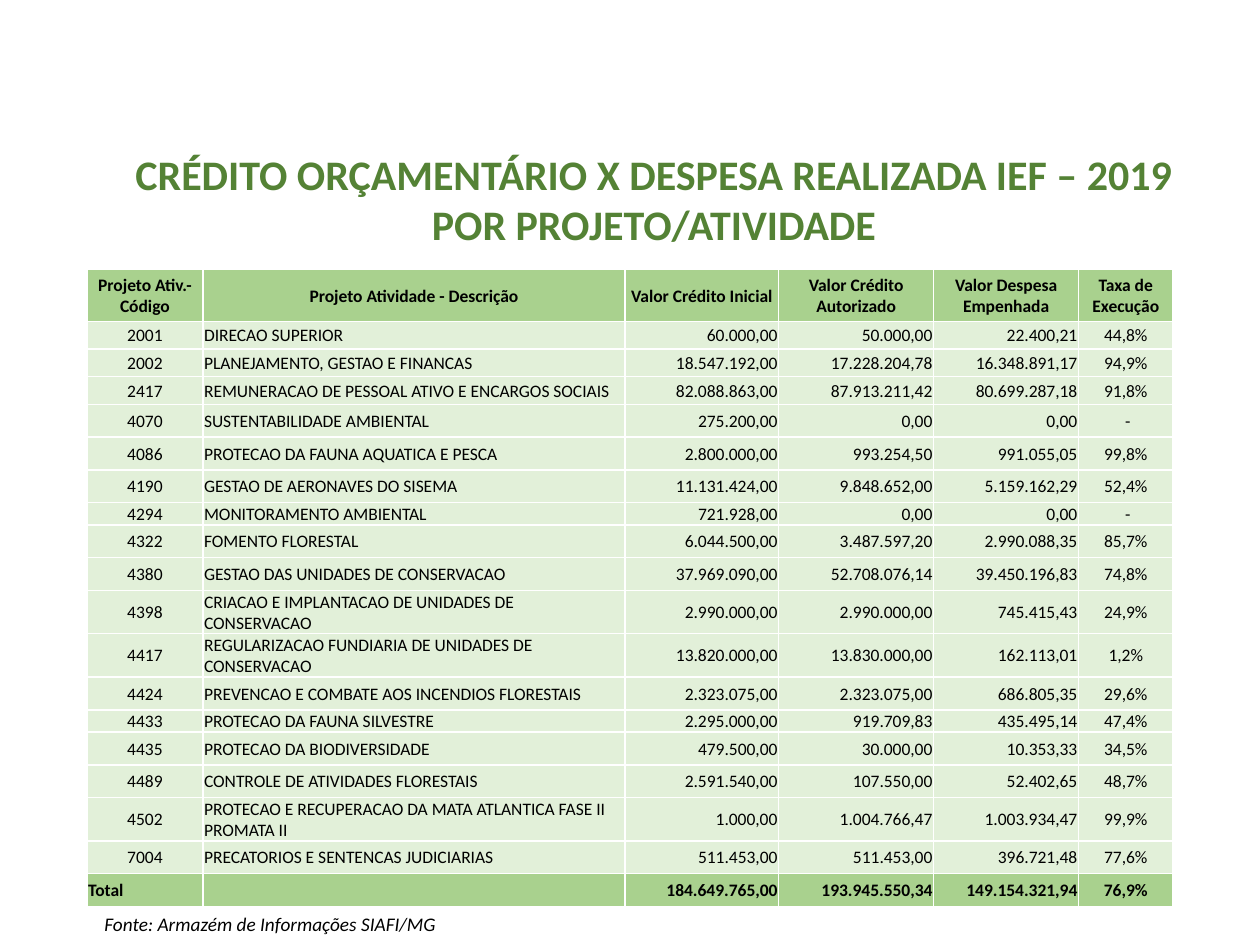
from dataclasses import dataclass

from lxml import etree
from pptx import Presentation, util as u
from pptx.dml import color
from pptx.enum import text
from pptx.oxml import ns


@dataclass(frozen=True)
class Theme:
    font: str = "Calibri"
    title: str = "548235"
    ink: str = "000000"
    band: str = "A9D18E"
    body: str = "E2F0D9"
    grid: str = "FFFFFF"
    title_size: int = 24
    table_size: int = 10
    source_size: int = 11
    grid_width: int = 1


LEFT, CENTER, RIGHT = text.PP_ALIGN.LEFT, text.PP_ALIGN.CENTER, text.PP_ALIGN.RIGHT
TOP, MIDDLE = text.MSO_ANCHOR.TOP, text.MSO_ANCHOR.MIDDLE

TITLE = ["CRÉDITO ORÇAMENTÁRIO X DESPESA REALIZADA IEF – 2019", "POR PROJETO/ATIVIDADE"]
SOURCE = ["Fonte: Armazém de Informações SIAFI/MG"]
COLUMN_WIDTHS = [0.92, 3.35, 1.22, 1.23, 1.15, 0.75]
COLUMN_ALIGNS = [CENTER, LEFT, RIGHT, RIGHT, RIGHT, CENTER]
HEADER = ["Projeto Ativ.- Código", "Projeto Atividade - Descrição", "Valor Crédito Inicial",
          "Valor Crédito Autorizado", "Valor Despesa Empenhada", "Taxa de Execução"]
PROJECTS = [
    (0.22, "2001", "DIRECAO SUPERIOR", "60.000,00", "50.000,00", "22.400,21", "44,8%"),
    (0.22, "2002", "PLANEJAMENTO, GESTAO E FINANCAS", "18.547.192,00", "17.228.204,78", "16.348.891,17", "94,9%"),
    (0.22, "2417", "REMUNERACAO DE PESSOAL ATIVO E ENCARGOS SOCIAIS", "82.088.863,00", "87.913.211,42", "80.699.287,18", "91,8%"),
    (0.26, "4070", "SUSTENTABILIDADE AMBIENTAL", "275.200,00", "0,00", "0,00", " -"),
    (0.26, "4086", "PROTECAO DA FAUNA AQUATICA E PESCA", "2.800.000,00", "993.254,50", "991.055,05", "99,8%"),
    (0.26, "4190", "GESTAO DE AERONAVES DO SISEMA", "11.131.424,00", "9.848.652,00", "5.159.162,29", "52,4%"),
    (0.17, "4294", "MONITORAMENTO AMBIENTAL", "721.928,00", "0,00", "0,00", " -"),
    (0.26, "4322", "FOMENTO FLORESTAL", "6.044.500,00", "3.487.597,20", "2.990.088,35", "85,7%"),
    (0.26, "4380", "GESTAO DAS UNIDADES DE CONSERVACAO", "37.969.090,00", "52.708.076,14", "39.450.196,83", "74,8%"),
    (0.33, "4398", "CRIACAO E IMPLANTACAO DE UNIDADES DE CONSERVACAO", "2.990.000,00", "2.990.000,00", "745.415,43", "24,9%"),
    (0.33, "4417", "REGULARIZACAO FUNDIARIA DE UNIDADES DE CONSERVACAO", "13.820.000,00", "13.830.000,00", "162.113,01", "1,2%"),
    (0.26, "4424", "PREVENCAO E COMBATE AOS INCENDIOS FLORESTAIS", "2.323.075,00", "2.323.075,00", "686.805,35", "29,6%"),
    (0.17, "4433", "PROTECAO DA FAUNA SILVESTRE", "2.295.000,00", "919.709,83", "435.495,14", "47,4%"),
    (0.26, "4435", "PROTECAO DA BIODIVERSIDADE", "479.500,00", "30.000,00", "10.353,33", "34,5%"),
    (0.26, "4489", "CONTROLE DE ATIVIDADES FLORESTAIS", "2.591.540,00", "107.550,00", "52.402,65", "48,7%"),
    (0.33, "4502", "PROTECAO E RECUPERACAO DA MATA ATLANTICA FASE II PROMATA II", "1.000,00", "1.004.766,47", "1.003.934,47", "99,9%"),
    (0.26, "7004", "PRECATORIOS E SENTENCAS JUDICIARIAS", "511.453,00", "511.453,00", "396.721,48", "77,6%"),
]
TOTAL = ["Total", "", "184.649.765,00", "193.945.550,34", "149.154.321,94", "76,9%"]


class SlideBuilder:
    def __init__(self, s, theme):
        self.s = s
        self.theme = theme

    def run(self, p, words, size, ink, bold=False, italic=False):
        r = p.add_run()
        r.text = words
        r.font.name = self.theme.font
        r.font.size = u.Pt(size)
        r.font.bold = bold
        r.font.italic = italic
        r.font.color.rgb = color.RGBColor.from_string(ink)

    def text_box(self, box, lines, size, ink, align=LEFT, anchor=TOP, **style):
        sp = self.s.shapes.add_textbox(*map(u.Inches, box))
        tf = sp.text_frame
        tf.word_wrap = True
        tf.vertical_anchor = anchor
        for i, line in enumerate(lines):
            p = tf.add_paragraph() if i else tf.paragraphs[0]
            p.alignment = align
            self.run(p, line, size, ink, **style)

    def borders(self, cell):
        tc_pr = cell._tc.get_or_add_tcPr()
        for i, side in enumerate(("a:lnL", "a:lnR", "a:lnT", "a:lnB")):
            ln = etree.Element(ns.qn(side), w=str(u.Pt(self.theme.grid_width)))
            fill = etree.SubElement(ln, ns.qn("a:solidFill"))
            etree.SubElement(fill, ns.qn("a:srgbClr"), val=self.theme.grid)
            tc_pr.insert(i, ln)

    def cell(self, cell, words, align, fill, bold):
        cell.margin_left = cell.margin_right = cell.margin_top = u.Inches(0.01)
        cell.margin_bottom = 0
        cell.vertical_anchor = MIDDLE
        cell.fill.solid()
        cell.fill.fore_color.rgb = color.RGBColor.from_string(fill)
        self.borders(cell)
        p = cell.text_frame.paragraphs[0]
        p.alignment = align
        if words:
            self.run(p, words, self.theme.table_size, self.theme.ink, bold)
        else:
            etree.SubElement(p._p, ns.qn("a:endParaRPr"), sz=str(self.theme.table_size * 100))

    def table(self, left, top, widths, rows):
        height = sum(row[0] for row in rows)
        frame = self.s.shapes.add_table(len(rows), len(widths), u.Inches(left), u.Inches(top),
                                        u.Inches(sum(widths)), u.Inches(height))
        table = frame.table
        for column, width in zip(table.columns, widths):
            column.width = u.Inches(width)
        for i, (row_height, words, aligns, fill, bold) in enumerate(rows):
            table.rows[i].height = u.Inches(row_height)
            for j, (word, align) in enumerate(zip(words, aligns)):
                self.cell(table.cell(i, j), word, align, fill, bold)


def main():
    prs = Presentation()
    prs.slide_width, prs.slide_height = u.Inches(10), u.Inches(7.5)
    theme = Theme()
    slide = SlideBuilder(prs.slides.add_slide(prs.slide_layouts[6]), theme)

    slide.text_box((0.69, 1.13, 9, 0.87), TITLE, theme.title_size, theme.title, CENTER, bold=True)
    rows = [(0.41, HEADER, [CENTER] * len(HEADER), theme.band, True)]
    rows += [(height, words, COLUMN_ALIGNS, theme.body, False) for height, *words in PROJECTS]
    rows.append((0.26, TOTAL, [LEFT] + COLUMN_ALIGNS[1:], theme.band, True))
    slide.table(0.69, 2.14, COLUMN_WIDTHS, rows)
    slide.text_box((0.73, 7.23, 7.95, 0.2), SOURCE, theme.source_size, theme.ink,
                   anchor=MIDDLE, italic=True)

    prs.save("out.pptx")


if __name__ == "__main__":
    main()
